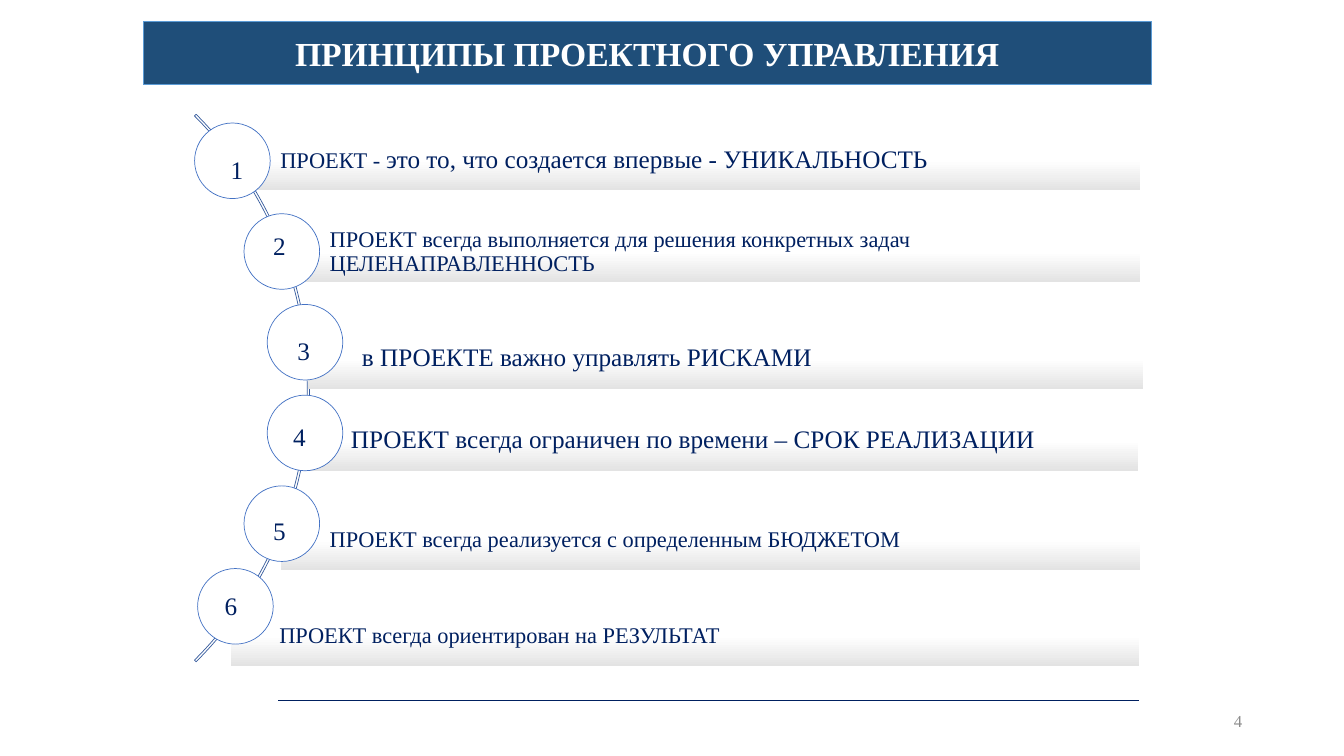
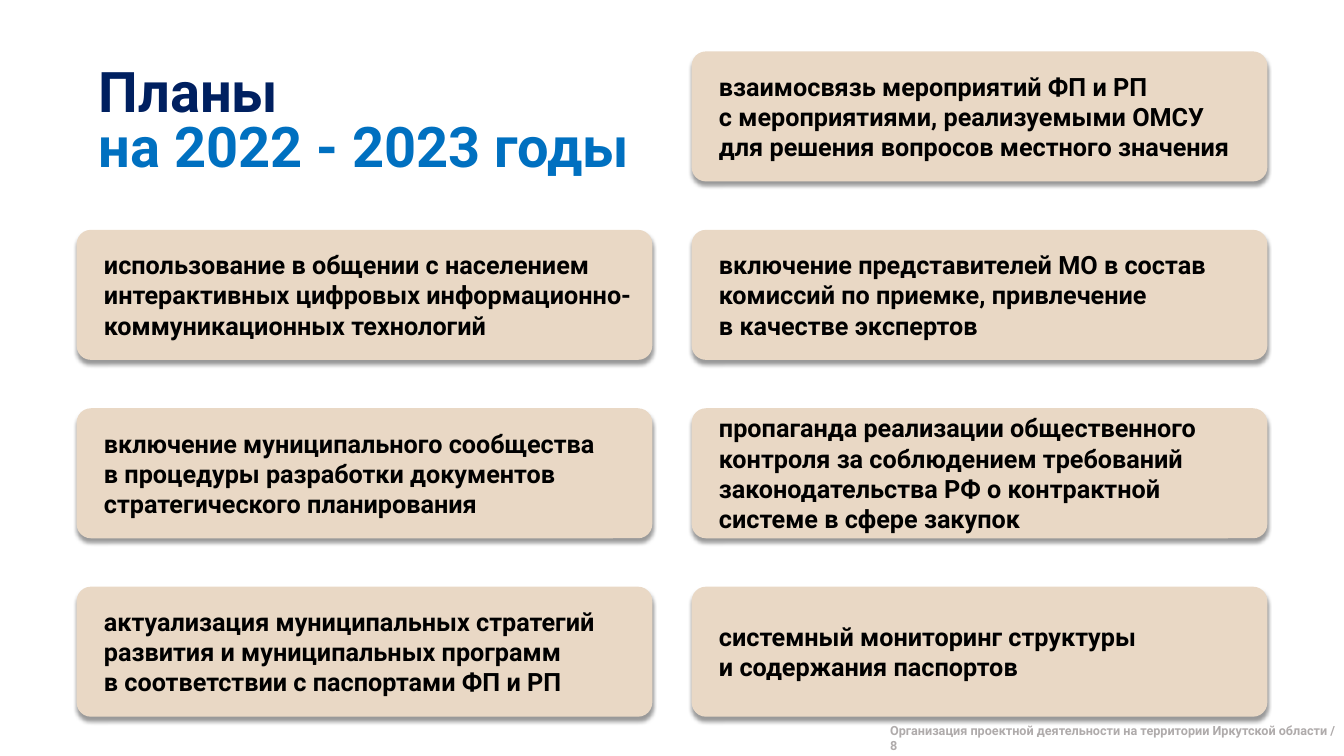
from dataclasses import dataclass, replace

from lxml import etree
from pptx import Presentation
from pptx.dml.color import RGBColor
from pptx.enum.shapes import MSO_CONNECTOR, MSO_SHAPE as SHAPE
from pptx.enum.text import MSO_ANCHOR as ANCHOR, MSO_AUTO_SIZE as AUTO_SIZE, PP_ALIGN as ALIGN
from pptx.oxml.ns import qn
from pptx.util import Pt

PX = 9144  # one hundredth of an inch in EMU


@dataclass(frozen=True)
class TextStyle:
    font: str
    size: int
    color: str
    bold: bool = False


@dataclass(frozen=True)
class Theme:
    white: str = "FFFFFF"
    band: str = "1F4E79"
    band_edge: str = "5B9BD5"
    arc: str = "365B9D"
    circle: str = "4472C4"
    bar_shade: str = "E3E3E3"
    navy: str = "002060"
    card: str = "E9D8C5"
    shadow: str = "000000"
    hairline: float = 0.5
    band_title: TextStyle = TextStyle("Times New Roman", 24, "FFFFFF", True)
    principle: TextStyle = TextStyle("Times New Roman", 16, "002060")
    principle_large: TextStyle = TextStyle("Times New Roman", 18, "002060")
    page: TextStyle = TextStyle("Times New Roman", 12, "8C8C8C")
    plan_title: TextStyle = TextStyle("Roboto", 40, "002060", True)
    plan_period: TextStyle = TextStyle("Roboto", 40, "0070C0", True)
    plan: TextStyle = TextStyle("Roboto", 18, "000000", True)
    footer: TextStyle = TextStyle("Roboto", 9, "AFABAB", True)


THEME = Theme()

BAR_HEIGHT, BAR_INSET, CIRCLE = 60, 48, 75
CARD_COLUMNS, CARD_TOP, CARD_PITCH = (76, 686), 51, 177
CARD_WIDTH, CARD_HEIGHT, CARD_INSET = 571, 129, 23

# (bar left, top, width), (circle left, top), (number left, top), text runs
PRINCIPLES = [
    ((230, 129, 901), (193, 122), (219, 148),
     [("ПРОЕКТ - ", THEME.principle),
      ("это то, что создается впервые - УНИКАЛЬНОСТЬ", THEME.principle_large)]),
    ((279, 220, 852), (242, 212), (261, 224),
     [("ПРОЕКТ всегда выполняется для решения конкретных задач ЦЕЛЕНАПРАВЛЕННОСТЬ",
       THEME.principle)]),
    ((305, 326, 829), (265, 302), (285, 328),
     [("в ПРОЕКТЕ важно управлять РИСКАМИ", THEME.principle_large)]),
    ((300, 407, 829), (265, 392), (281, 413),
     [("ПРОЕКТ всегда ограничен по времени – СРОК РЕАЛИЗАЦИИ", THEME.principle_large)]),
    ((279, 506, 852), (242, 482), (261, 506),
     [("ПРОЕКТ всегда реализуется с определенным БЮДЖЕТОМ", THEME.principle)]),
    ((229, 601, 901), (196, 564), (213, 581),
     [("ПРОЕКТ всегда ориентирован на РЕЗУЛЬТАТ", THEME.principle)]),
]

# Cards by column; the title takes the first place of the left column
PLANS = [
    [None,
     ["использование в общении с населением интерактивных цифровых "
      "информационно-коммуникационных технологий"],
     ["включение муниципального сообщества",
      "в процедуры разработки документов стратегического планирования"],
     ["актуализация муниципальных стратегий развития и муниципальных программ",
      "в соответствии с паспортами ФП и РП"]],
    [["взаимосвязь мероприятий ФП и РП",
      "с мероприятиями, реализуемыми ОМСУ",
      "для решения вопросов местного значения"],
     ["включение представителей МО в состав комиссий по приемке, привлечение",
      "в качестве экспертов"],
     ["пропаганда реализации общественного контроля за соблюдением требований "
      "законодательства РФ о контрактной",
      "системе в сфере закупок"],
     ["системный мониторинг структуры", "и содержания паспортов"]],
]


def rgb(color):
    return RGBColor.from_string(color)


def px(*lengths):
    return [length * PX for length in lengths]


def write(shape, paragraphs, align=ALIGN.LEFT, spacing=None, **frame_format):
    """Fill a shape with paragraphs, each a list of (text, style) runs."""
    frame = shape.text_frame
    settings = {"word_wrap": True, "auto_size": AUTO_SIZE.NONE,
                "vertical_anchor": ANCHOR.TOP, **frame_format}
    for name, value in settings.items():
        setattr(frame, name, value)
    for index, runs in enumerate(paragraphs):
        paragraph = frame.add_paragraph() if index else frame.paragraphs[0]
        paragraph.alignment = align
        paragraph.line_spacing = spacing
        for text, style in runs:
            run = paragraph.add_run()
            run.text = text
            run.font.color.rgb = rgb(style.color)
            for name, value in {"name": style.font, "size": Pt(style.size),
                                "bold": style.bold}.items():
                setattr(run.font, name, value)


def paint(shape, fill=None, line=None):
    if fill:
        shape.fill.solid()
        shape.fill.fore_color.rgb = rgb(fill)
    else:
        shape.fill.background()
    if line:
        shape.line.color.rgb = rgb(line)
        shape.line.width = Pt(THEME.hairline)
    else:
        shape.line.fill.background()


def add_figure(slide, kind, box, fill=None, line=None):
    figure = slide.shapes.add_shape(kind, *px(*box))
    figure.shadow.inherit = False
    paint(figure, fill, line)
    return figure


def add_label(slide, box, text, style, **text_format):
    label = slide.shapes.add_textbox(*px(*box))
    write(label, [[(text, style)]], **text_format)


def place_title(slide, box, paragraphs, **text_format):
    title = slide.shapes.title
    title.left, title.top, title.width, title.height = px(*box)
    write(title, paragraphs, **text_format)
    return title


def add_bar(slide, left, top, width, runs, inset):
    bar = add_figure(slide, SHAPE.RECTANGLE, (left, top, width, BAR_HEIGHT))
    bar.fill.gradient()
    bar.fill.gradient_angle = 270
    for stop, position, color in zip(bar.fill.gradient_stops, (0.5, 1),
                                     (THEME.white, THEME.bar_shade)):
        stop.position = position
        stop.color.rgb = rgb(color)
    write(bar, [runs], spacing=0.9, vertical_anchor=ANCHOR.MIDDLE,
          margin_left=inset * PX, margin_right=4 * PX)


def add_rule(slide, left, right, y):
    rule = slide.shapes.add_connector(MSO_CONNECTOR.STRAIGHT, *px(left, y, right, y))
    rule.line.color.rgb = rgb(THEME.navy)
    rule.line.width = Pt(1)
    etree.SubElement(rule.element.spPr, qn("a:effectLst"))


def drop_shadow(shape):
    effects = shape.element.spPr.find(qn("a:effectLst"))
    shadow = etree.SubElement(effects, qn("a:outerShdw"), blurRad=str(Pt(3)),
                              dist=str(Pt(3)), dir="5400000", algn="t", rotWithShape="0")
    color = etree.SubElement(shadow, qn("a:srgbClr"), val=THEME.shadow)
    etree.SubElement(color, qn("a:alpha"), val="40000")


def add_card(slide, left, top, lines):
    card = add_figure(slide, SHAPE.ROUNDED_RECTANGLE,
                      (left, top, CARD_WIDTH, CARD_HEIGHT), THEME.card)
    card.adjustments[0] = 0.11
    drop_shadow(card)
    write(card, [[(line, THEME.plan)] for line in lines], vertical_anchor=ANCHOR.MIDDLE,
          margin_left=CARD_INSET * PX, margin_right=0, margin_top=0, margin_bottom=0)


def build_principles(slide):
    band = place_title(slide, (142, 21, 1000, 63),
                       [[("ПРИНЦИПЫ ПРОЕКТНОГО УПРАВЛЕНИЯ", THEME.band_title)]],
                       align=ALIGN.CENTER, vertical_anchor=ANCHOR.MIDDLE)
    paint(band, THEME.band, THEME.band_edge)

    arc = add_figure(slide, SHAPE.BLOCK_ARC, (-461, 1, 768, 768), line=THEME.arc)
    for index, value in enumerate((189, 27, 0.003)):
        arc.adjustments[index] = value

    for number, (bar, circle, digit, runs) in enumerate(PRINCIPLES, 1):
        inset = BAR_INSET + (6 if number == 3 else 0)
        add_bar(slide, *bar, runs, inset)
        add_figure(slide, SHAPE.OVAL, (*circle, CIRCLE, CIRCLE), THEME.white, THEME.circle)
        add_label(slide, (*digit, 39, 40), str(number), THEME.principle_large)

    add_rule(slide, 276, 1130, 695)
    add_label(slide, (942, 695, 300, 40), "4", THEME.page,
              align=ALIGN.RIGHT, vertical_anchor=ANCHOR.MIDDLE)


def build_plans(slide):
    place_title(slide, (88, 64, 590, 120),
                [[("Планы", THEME.plan_title)],
                 [("на 2022 - 2023 годы", THEME.plan_period)]], spacing=Pt(39))
    for left, column in zip(CARD_COLUMNS, PLANS):
        for row, lines in enumerate(column):
            if lines:
                add_card(slide, left, CARD_TOP + row * CARD_PITCH, lines)
    add_label(slide, (873, 712, 466, 25),
              "Организация проектной деятельности на территории Иркутской области / 8",
              THEME.footer)


def main():
    deck = Presentation()
    deck.slide_width, deck.slide_height = px(1333, 750)
    title_only = deck.slide_layouts[5]
    for build in (build_principles, build_plans):
        build(deck.slides.add_slide(title_only))
    deck.save("out.pptx")


if __name__ == "__main__":
    main()
